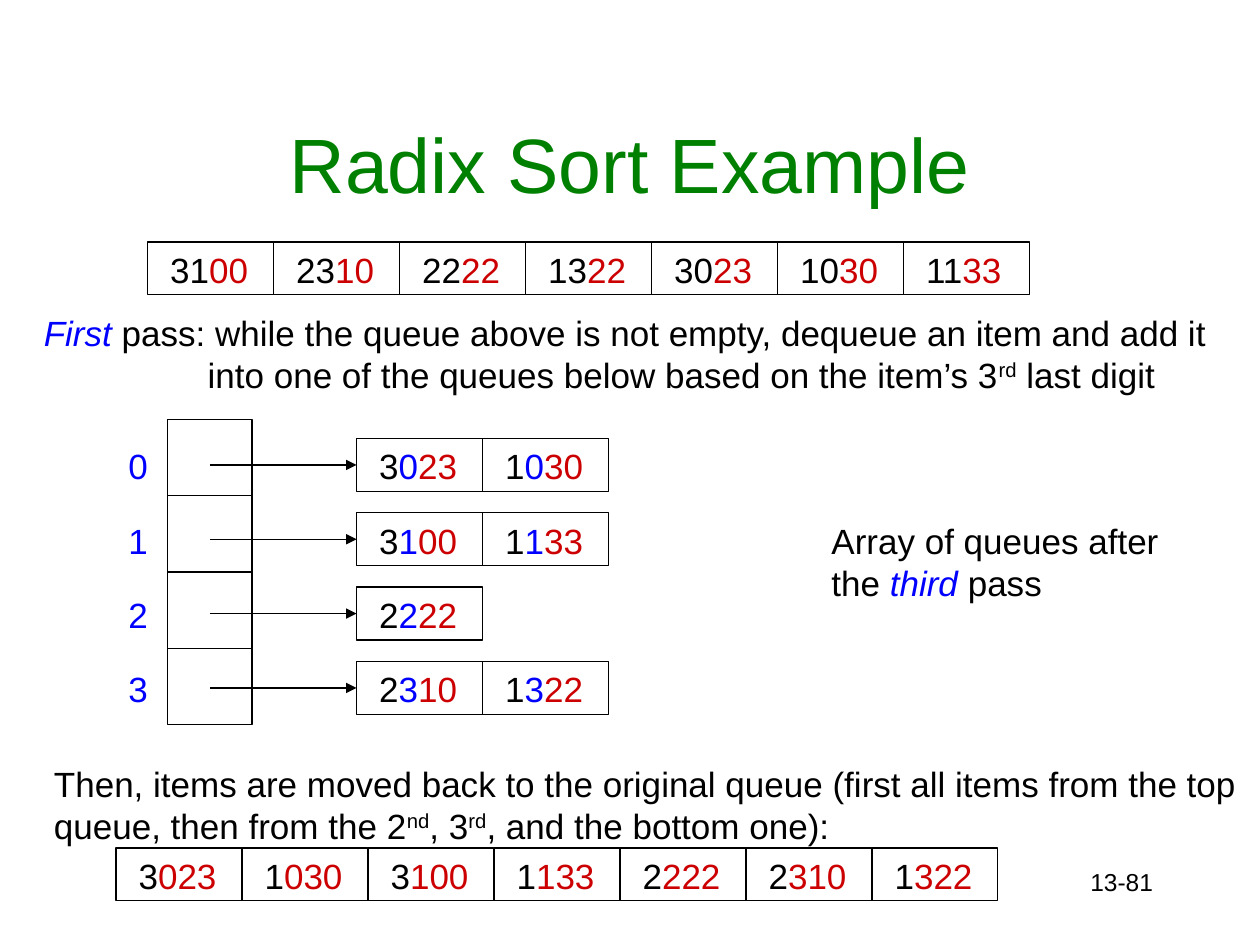
from dataclasses import dataclass

from lxml import etree
from pptx import Presentation
from pptx.dml.color import RGBColor
from pptx.enum import shapes, text
from pptx.oxml import ns
from pptx.util import Inches, Pt


@dataclass(frozen=True)
class Theme:
    font: str = "Arial"
    ink: str = "000000"
    title: str = "008000"
    accent: str = "0000FF"
    sorted: str = "CC0000"
    title_size: float = 44
    body_size: float = 20
    number_size: float = 14
    line_width: float = 0.75


THEME = Theme()


@dataclass(frozen=True)
class Span:
    text: str
    color: str = THEME.ink
    italic: bool = False
    raised: bool = False


@dataclass(frozen=True)
class Queue:
    left: float
    top: float
    items: tuple[str, ...]
    digit_colors: tuple[str, str, str, str]


CELL_WIDTH, CELL_HEIGHT = 1, 0.42
BUCKET_LEFT, BUCKET_TOP, BUCKET_WIDTH = 1.33, 3.33, 0.67
BUCKETS_HEIGHT = 2.42
QUEUE_LEFT, QUEUE_TOP, QUEUE_STEP = 2.83, 3.48, 0.59

TWO_SORTED = (THEME.ink, THEME.ink, THEME.sorted, THEME.sorted)
THIRD_DIGIT = (THEME.ink, THEME.accent, THEME.sorted, THEME.sorted)
THREE_SORTED = (THEME.ink, THEME.sorted, THEME.sorted, THEME.sorted)

BEFORE = Queue(1.17, 1.92, ("3100", "2310", "2222", "1322", "3023", "1030", "1133"), TWO_SORTED)
AFTER = Queue(0.92, 6.73, ("3023", "1030", "3100", "1133", "2222", "2310", "1322"), THREE_SORTED)
BUCKET_ITEMS = (("3023", "1030"), ("3100", "1133"), ("2222",), ("2310", "1322"))


def write(paragraph, words: str, *, color: str = THEME.ink, size: float = THEME.body_size,
          italic: bool = False, raised: bool = False) -> None:
    run = paragraph.add_run()
    run.text = words
    run.font.name = THEME.font
    run.font.size = Pt(size)
    run.font.italic = italic
    run.font.color.rgb = RGBColor.from_string(color)
    if raised:
        run._r.get_or_add_rPr().set("baseline", "30000")


def add_note(slide, left: float, top: float, width: float, height: float, *spans: Span,
             size: float = THEME.body_size, align=text.PP_ALIGN.LEFT, hanging: float = 0) -> None:
    frame = slide.shapes.add_textbox(*map(Inches, (left, top, width, height))).text_frame
    frame.word_wrap = True
    paragraph = frame.paragraphs[0]
    paragraph.alignment = align
    if hanging:
        properties = paragraph._p.get_or_add_pPr()
        properties.set("marL", str(Inches(hanging)))
        properties.set("indent", str(-Inches(hanging)))
    for span in spans:
        write(paragraph, span.text, color=span.color, size=size,
              italic=span.italic, raised=span.raised)


def add_box(slide, left: float, top: float, width: float, height: float):
    box = slide.shapes.add_shape(shapes.MSO_SHAPE.RECTANGLE,
                                 *map(Inches, (left, top, width, height)))
    box.shadow.inherit = False
    box.fill.background()
    box.line.color.rgb = RGBColor.from_string(THEME.ink)
    box.line.width = Pt(THEME.line_width)
    return box


def add_queue(slide, queue: Queue) -> list:
    cells = []
    for column, item in enumerate(queue.items):
        cell = add_box(slide, queue.left + column * CELL_WIDTH, queue.top, CELL_WIDTH, CELL_HEIGHT)
        frame = cell.text_frame
        frame.margin_left = Inches(0.18)
        frame.vertical_anchor = text.MSO_ANCHOR.TOP
        paragraph = frame.paragraphs[0]
        paragraph.alignment = text.PP_ALIGN.LEFT
        for color in dict.fromkeys(queue.digit_colors):
            digits = "".join(d for d, c in zip(item, queue.digit_colors) if c == color)
            write(paragraph, digits, color=color)
        cells.append(cell)
    return cells


def add_arrow(slide, left: float, cell) -> None:
    middle = cell.top + cell.height // 2
    arrow = slide.shapes.add_connector(shapes.MSO_CONNECTOR.STRAIGHT,
                                       Inches(left), middle, cell.left, middle)
    arrow.end_connect(cell, 1)
    arrow.line.color.rgb = RGBColor.from_string(THEME.ink)
    arrow.line.width = Pt(THEME.line_width)
    etree.SubElement(arrow.line._get_or_add_ln(), ns.qn("a:tailEnd"), type="triangle")
    etree.SubElement(arrow._element.spPr, ns.qn("a:effectLst"))


def add_title(slide, words: str) -> None:
    title = slide.shapes.title
    title.left, title.top, title.width, title.height = map(Inches, (0.75, 0.67, 8.5, 1.25))
    title.text_frame.vertical_anchor = text.MSO_ANCHOR.MIDDLE
    paragraph = title.text_frame.paragraphs[0]
    paragraph.alignment = text.PP_ALIGN.CENTER
    write(paragraph, words, color=THEME.title, size=THEME.title_size)


def add_buckets(slide) -> None:
    height = BUCKETS_HEIGHT / len(BUCKET_ITEMS)
    for digit, items in enumerate(BUCKET_ITEMS):
        top = QUEUE_TOP + digit * QUEUE_STEP
        add_box(slide, BUCKET_LEFT, BUCKET_TOP + digit * height, BUCKET_WIDTH, height)
        add_note(slide, 0.92, top, 0.42, 0.43, Span(str(digit), THEME.accent))
        cells = add_queue(slide, Queue(QUEUE_LEFT, top, items, THIRD_DIGIT))
        add_arrow(slide, BUCKET_LEFT + BUCKET_WIDTH / 2, cells[0])


def main() -> None:
    deck = Presentation()
    deck.slide_width, deck.slide_height = Inches(10), Inches(7.5)
    slide = deck.slides.add_slide(deck.slide_layouts[5])

    add_title(slide, "Radix Sort Example")
    add_queue(slide, BEFORE)
    add_note(slide, 0.25, 2.42, 9.5, 0.77,
             Span("First", THEME.accent, italic=True),
             Span(" pass: while the queue above is not empty, dequeue an item and add it "
                  "into one of the queues below based on the item’s 3"),
             Span("rd", raised=True), Span(" last digit"), hanging=1.3)
    add_buckets(slide)
    add_note(slide, 6.5, 4.07, 3.08, 0.77,
             Span("Array of queues after the "),
             Span("third", THEME.accent, italic=True), Span(" pass"))
    add_note(slide, 0.33, 6, 9.67, 0.77,
             Span("Then, items are moved back to the original queue "
                  "(first all items from the top queue, then from the 2"),
             Span("nd", raised=True), Span(", 3"), Span("rd", raised=True),
             Span(", and the bottom one):"))
    add_queue(slide, AFTER)
    add_note(slide, 7.17, 6.83, 2.08, 0.5, Span("13-81"),
             size=THEME.number_size, align=text.PP_ALIGN.RIGHT)
    deck.save("out.pptx")


if __name__ == "__main__":
    main()
